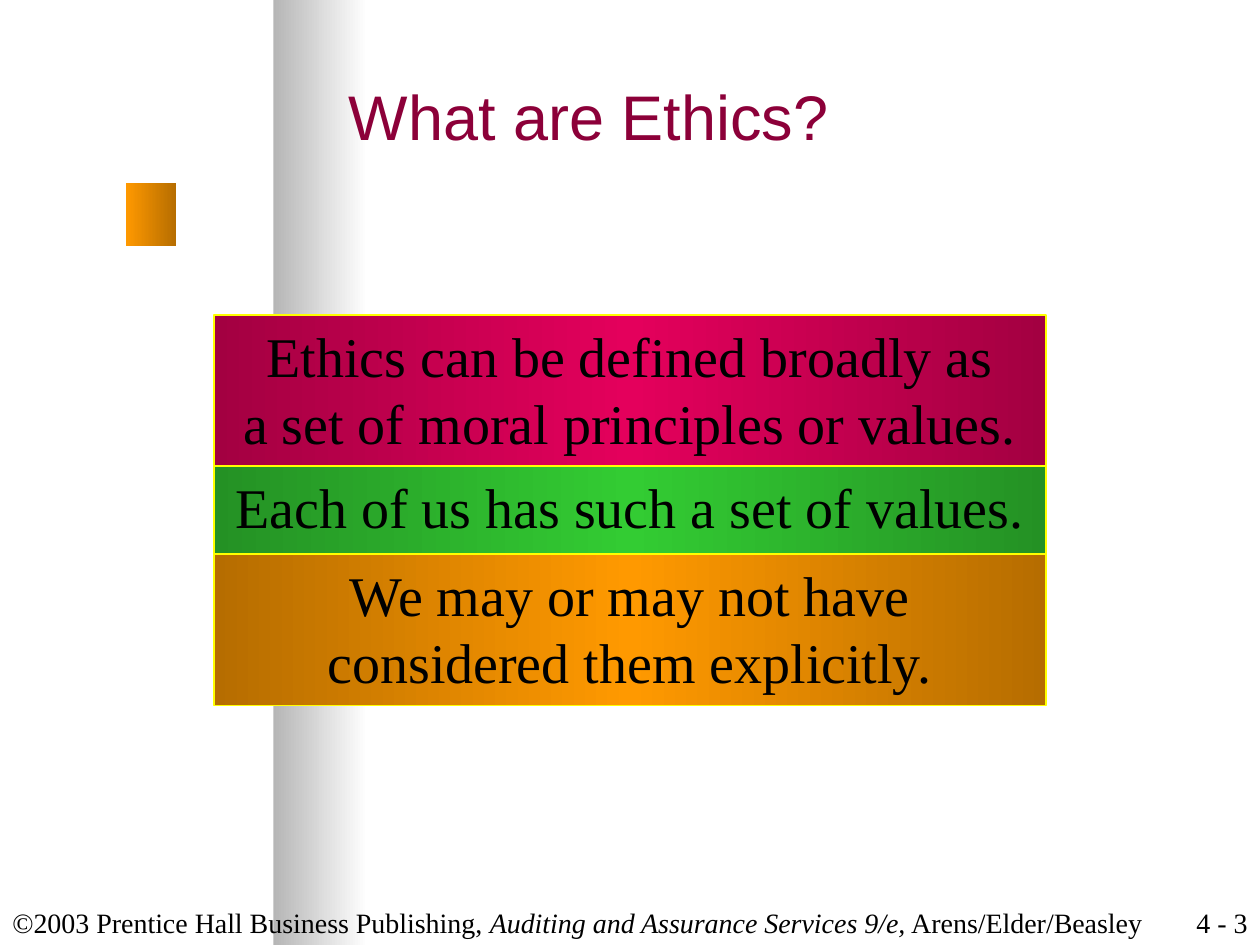
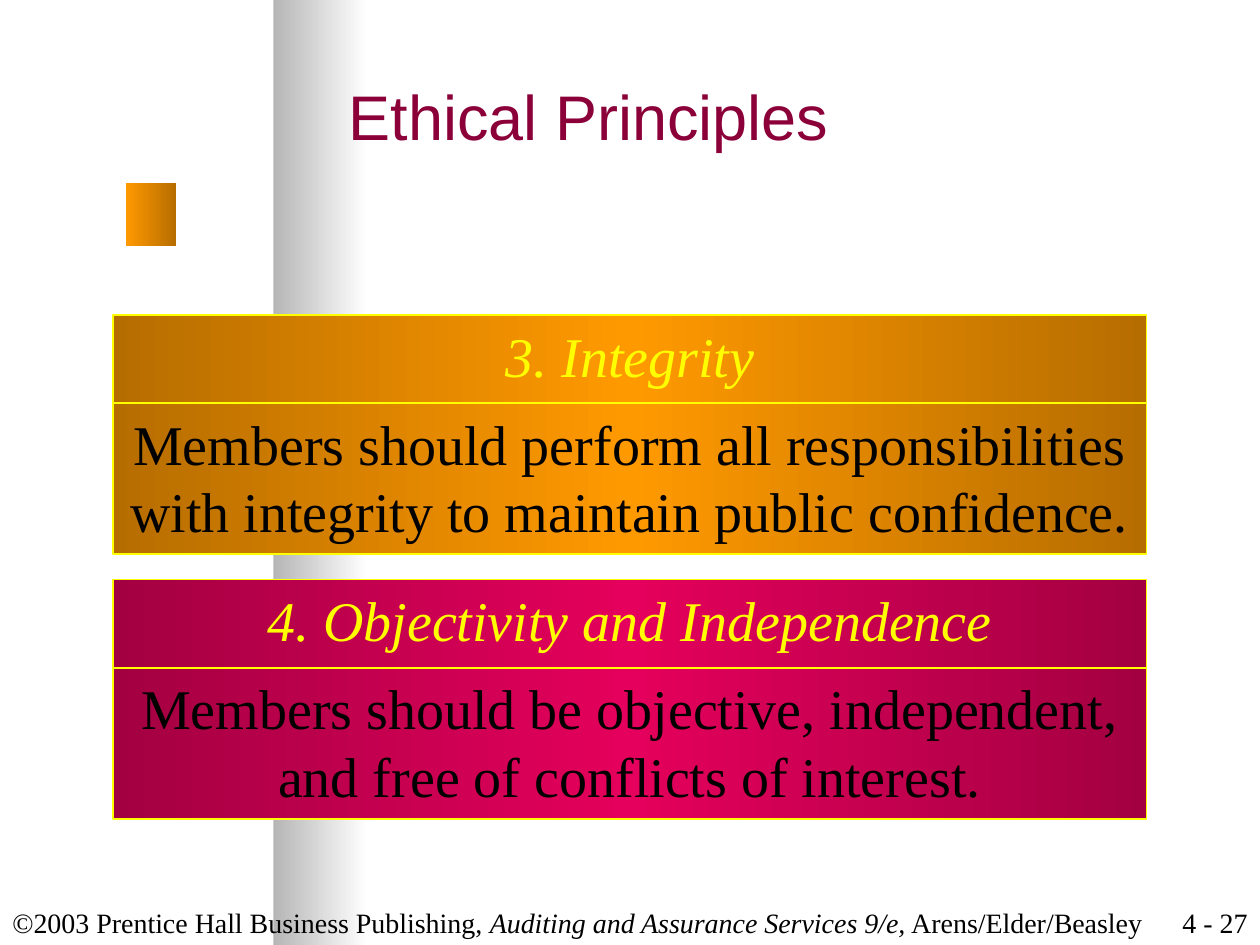
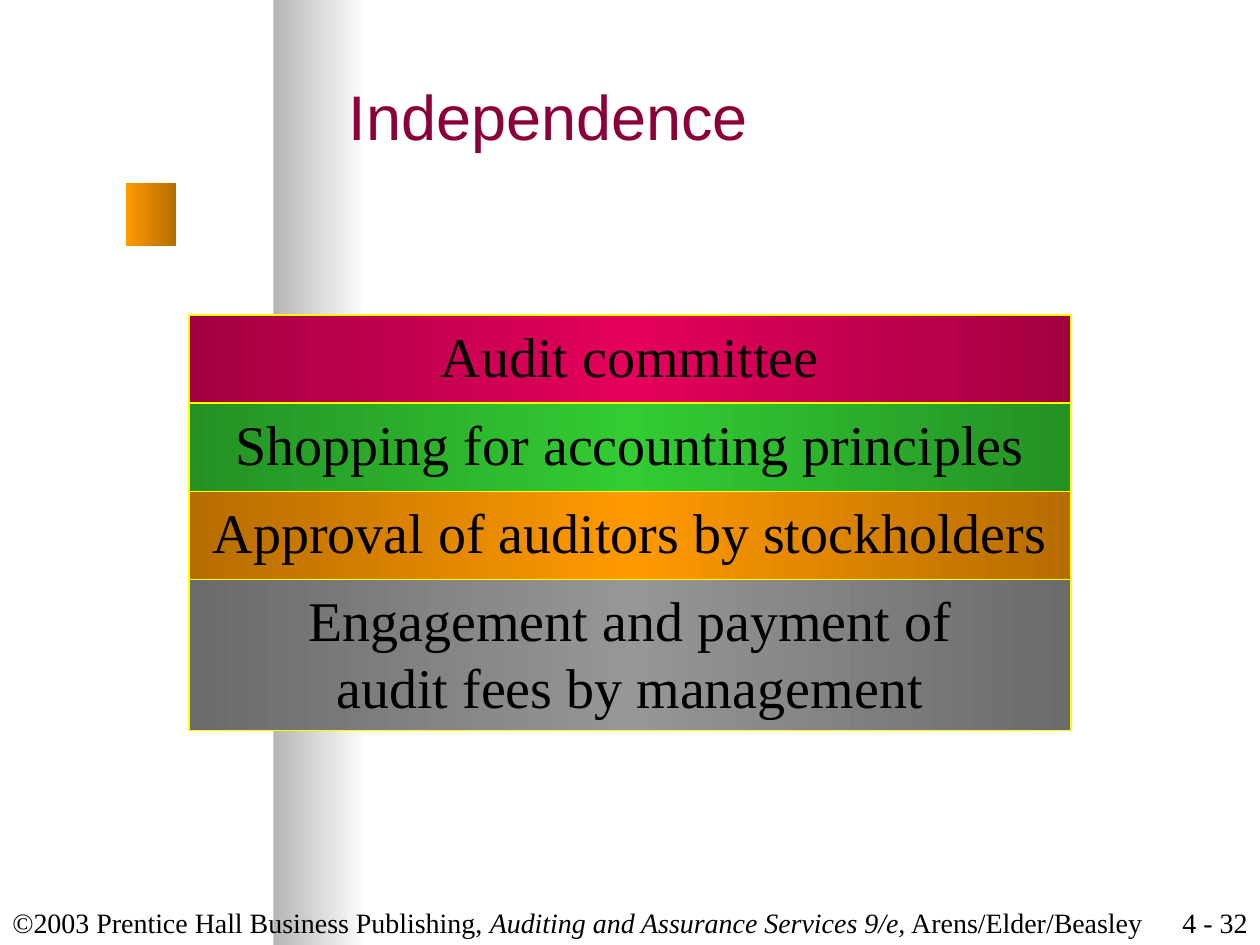
from lxml import etree
from pptx import Presentation
from pptx.dml.color import RGBColor
from pptx.enum import shapes, text
from pptx.oxml import ns
from pptx.util import Inches, Pt

WIDTH, HEIGHT = 10, 7.5
ROW_TOP, LINE_HEIGHT, ROW_PADDING = 2.5, 0.5, 0.2
SERIF, SANS = "Times New Roman", "Arial"
BLACK, WHITE, YELLOW, MAROON = "000000", "FFFFFF", "FFFF00", "8C0039"
PINK, GREEN, ORANGE, GRAY = "E4005C", "33CC33", "FF9900", "969696"
SHADE = 46275  # share of light kept at the dark end, in 1/1000 percent
LEFT, CENTER, RIGHT = text.PP_ALIGN.LEFT, text.PP_ALIGN.CENTER, text.PP_ALIGN.RIGHT
TOP, MIDDLE, BOTTOM = (text.MSO_ANCHOR.TOP, text.MSO_ANCHOR.MIDDLE,
                       text.MSO_ANCHOR.BOTTOM)

# Each slide: title, number, row width, line width and stacks of rows;
# a row is (colour, lines, further text format)
HEADING = dict(color=YELLOW, italic=True)
HANGING = dict(hanging=0.5)
SLIDES = [
    ("What are Ethics?", 3, 6.6, 1, [[
        (PINK, ["Ethics can be defined broadly as",
                "a set of moral principles or values."], {}),
        (GREEN, ["Each of us has such a set of values."], {}),
        (ORANGE, ["We may or may not have", "considered them explicitly."], {}),
    ]]),
    ("Ethical Principles", 27, 8.2, 1, [[
        (ORANGE, ["3. Integrity"], {**HEADING, **HANGING}),
        (ORANGE, ["Members should perform all responsibilities",
                  "with integrity to maintain public confidence."], HANGING),
    ], [
        (PINK, ["4. Objectivity and Independence"], HEADING),
        (PINK, ["Members should be objective, independent,",
                "and free of conflicts of interest."], {}),
    ]]),
    ("Independence", 32, 7, 0.75, [[
        (PINK, ["Audit committee"], {}),
        (GREEN, ["Shopping for accounting principles"], {}),
        (ORANGE, ["Approval of auditors by stockholders"], {}),
        (GRAY, ["Engagement and payment of", "audit fees by management"], {}),
    ]]),
]


def rgb(value):
    return RGBColor.from_string(value)


def write(shape, lines, size=32, font=SERIF, color=BLACK, italic=False,
          align=LEFT, anchor=TOP, wrap=False, hanging=0):
    """Fill a shape with lines; a line is a string or a list of (string, italic)."""
    frame = shape.text_frame
    frame.word_wrap = wrap
    frame.vertical_anchor = anchor
    for index, line in enumerate(lines):
        para = frame.add_paragraph() if index else frame.paragraphs[0]
        para.alignment = align
        if hanging:
            properties = para._p.get_or_add_pPr()
            properties.set("marL", str(Inches(hanging)))
            properties.set("indent", str(-Inches(hanging)))
        for words, slanted in [(line, italic)] if isinstance(line, str) else line:
            span = para.add_run()
            span.text = words
            span.font.size, span.font.name = Pt(size), font
            span.font.italic = slanted
            span.font.color.rgb = rgb(color)


def add_text(page, box, lines, **style):
    write(page.shapes.add_textbox(*map(Inches, box)), lines, **style)


def add_gradient_box(page, box, stops, line_width=0):
    """Draw a rectangle; stops are (percent, colour, shaded) from left to right."""
    shape = page.shapes.add_shape(shapes.MSO_SHAPE.RECTANGLE, *map(Inches, box))
    shape.shadow.inherit = False
    shape.fill.gradient()
    shape.fill.gradient_angle = 0
    stop_list = shape._element.spPr.find(".//" + ns.qn("a:gsLst"))
    for old in list(stop_list):
        stop_list.remove(old)
    for percent, color, shaded in stops:
        stop = etree.SubElement(stop_list, ns.qn("a:gs"), pos=str(percent * 1000))
        tone = etree.SubElement(stop, ns.qn("a:srgbClr"), val=color)
        if shaded:
            etree.SubElement(tone, ns.qn("a:shade"), val=str(SHADE))
    if line_width:
        shape.line.color.rgb = rgb(YELLOW)
        shape.line.width = Pt(line_width)
    else:
        shape.line.fill.background()
    return shape


def add_frame(page, title, number):
    # Vertical band and square marker
    add_gradient_box(page, (2.17, 0, 0.75, HEIGHT),
                     [(0, WHITE, True), (100, WHITE, False)])
    add_gradient_box(page, (1, 1.45, 0.4, 0.5),
                     [(0, ORANGE, False), (100, ORANGE, True)])
    # Footer and slide number
    footer = [("©2003 Prentice Hall Business Publishing, ", False),
              ("Auditing and Assurance Services 9/e,", True),
              (" Arens/Elder/Beasley", False)]
    footer_top = HEIGHT - 0.5
    add_text(page, (0, footer_top, 9.2, 0.5), [footer], size=16, anchor=BOTTOM)
    add_text(page, (WIDTH - 1, footer_top, 1, 0.5), [f"4 - {number}"], size=16,
             align=RIGHT, anchor=BOTTOM, wrap=True)
    # Title
    add_text(page, (2.67, 0.25, 7, 1.33), [title], size=36, font=SANS,
             color=MAROON, anchor=MIDDLE, wrap=True)


def add_stacks(page, stacks, width, line_width):
    """Place rows under each other, centred, with a gap after each stack."""
    left, top = (WIDTH - width) / 2, ROW_TOP
    for stack in stacks:
        for color, lines, style in stack:
            height = ROW_PADDING + LINE_HEIGHT * len(lines)
            row = add_gradient_box(
                page, (left, top, width, height),
                [(0, color, True), (50, color, False), (100, color, True)],
                line_width)
            write(row, lines, align=CENTER, **style)
            top += height
        top += 0.2


def main():
    deck = Presentation()
    deck.slide_width, deck.slide_height = Inches(WIDTH), Inches(HEIGHT)
    for title, number, width, line_width, stacks in SLIDES:
        page = deck.slides.add_slide(deck.slide_layouts[6])
        add_frame(page, title, number)
        add_stacks(page, stacks, width, line_width)
    deck.save("out.pptx")


if __name__ == "__main__":
    main()
